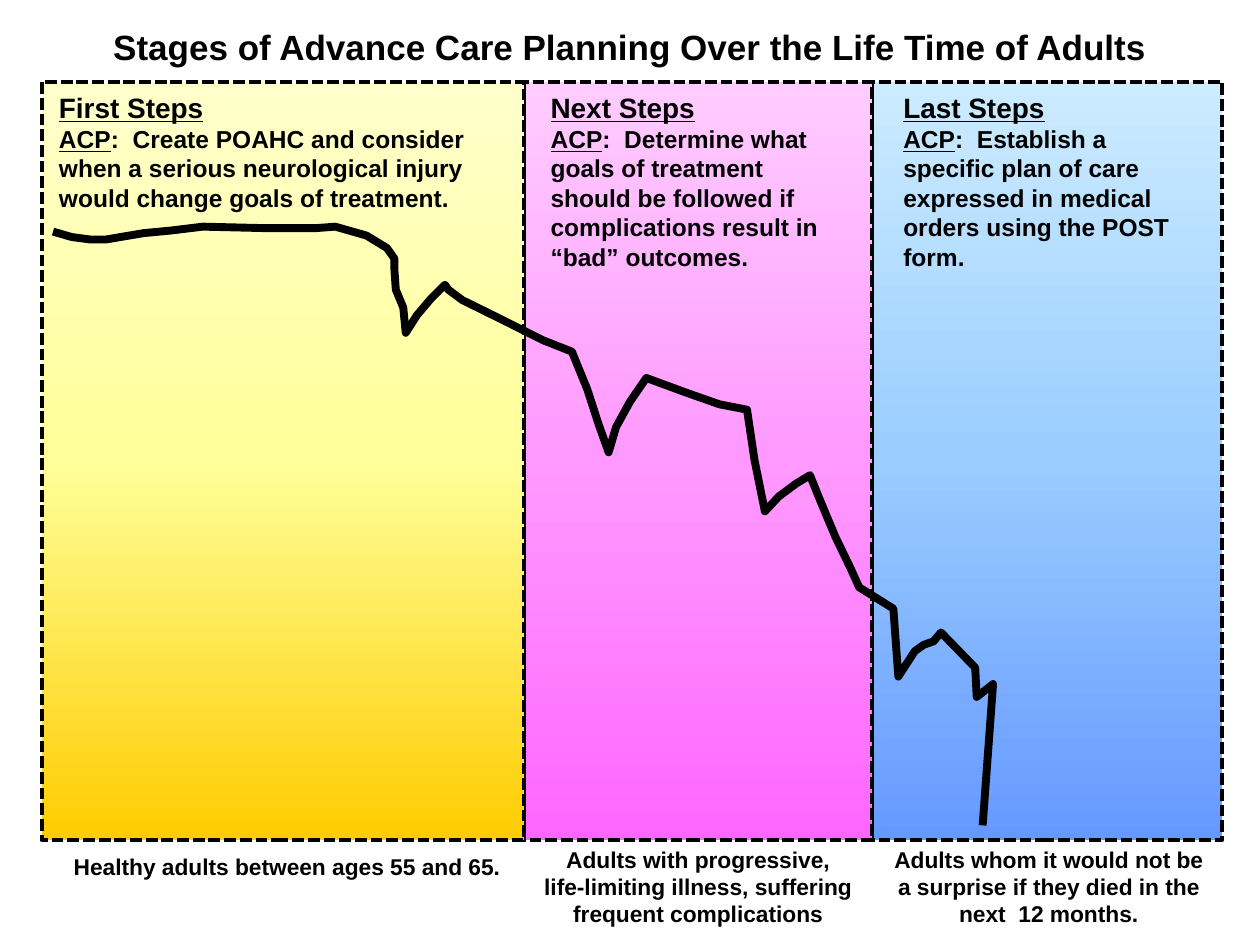
from copy import deepcopy
from dataclasses import dataclass

from pptx import Presentation
from pptx.dml.color import RGBColor as RGB
from pptx.enum.dml import MSO_LINE as Dash
from pptx.enum.shapes import MSO_SHAPE as Kind
from pptx.enum.text import PP_ALIGN as Align
from pptx.oxml.ns import qn
from pptx.util import Cm, Pt

INK = {"text": "000000", "line": "000000"}
FADES = {
    "first": ("FFFFCC", "FFFF99", "FFCC00"),
    "next": ("FFCCFF", "FF99FF", "FF66FF"),
    "last": ("CCECFF", "99CCFF", "6699FF"),
}
TOP, TALL = 1.65, 15.29
HEAD_TOP = 1.7


@dataclass
class Box:
    left: float
    top: float
    width: float
    height: float

    def cm(self) -> list:
        return [Cm(v) for v in (self.left, self.top, self.width, self.height)]


@dataclass
class Stage:
    name: str
    left: float
    width: float
    head: Box
    plan: str
    foot: Box
    group: str


STAGES = [
    Stage("last", 17.58, 7.06, Box(17.96, HEAD_TOP, 6.38, 3.94),
          "Establish a specific plan of care expressed in medical "
          "orders using the POST form.",
          Box(17.75, 16.92, 6.78, 1.93),
          "Adults whom it would not be a surprise if they died in the "
          "next  12 months."),
    Stage("next", 10.57, 7.01, Box(10.85, HEAD_TOP, 6.35, 3.33),
          "Determine what goals of treatment should be followed if "
          "complications result in “bad” outcomes.",
          Box(10.59, 16.92, 6.96, 1.93),
          "Adults with progressive,\vlife-limiting illness, suffering "
          "frequent complications"),
    Stage("first", 0.84, 9.73, Box(0.94, HEAD_TOP, 9.25, 2.74),
          "Create POAHC and consider when a serious neurological injury "
          "would change goals of treatment.",
          Box(0.99, 17.07, 9.58, 0.81),
          "Healthy adults between ages 55 and 65."),
]

CURVE = [
    (1.07, 4.67), (1.45, 4.78), (1.83, 4.83), (2.13, 4.83), (2.9, 4.7),
    (3.43, 4.65), (4.09, 4.57), (5.31, 4.6), (6.38, 4.6), (6.76, 4.57),
    (7.39, 4.75), (7.8, 5), (7.95, 5.21), (7.95, 5.41), (7.98, 5.84),
    (8.13, 6.2), (8.18, 6.71), (8.41, 6.35), (8.69, 6.02), (8.97, 5.74),
    (9.04, 5.84), (9.32, 6.05), (10.03, 6.4), (10.95, 6.86), (11.53, 7.09),
    (11.84, 7.85), (12.07, 8.56), (12.27, 9.12), (12.42, 8.61), (12.7, 8.1),
    (13.03, 7.62), (13.79, 7.9), (14.5, 8.15), (15.06, 8.26), (15.21, 9.27),
    (15.42, 10.31), (15.7, 10.01), (16.05, 9.75), (16.33, 9.58),
    (16.51, 10.03), (16.84, 10.82), (17.15, 11.46), (17.32, 11.84),
    (18.01, 12.27), (18.11, 13.64), (18.44, 13.13), (18.62, 13),
    (18.82, 12.93), (18.97, 12.75), (19.66, 13.46), (19.69, 14.05),
    (20.02, 13.79), (19.81, 16.64),
]


def style(run, size: float, under: bool = False) -> None:
    font = run.font
    font.name, font.size, font.bold = "Arial", Pt(size), True
    font.underline = under
    font.color.rgb = RGB.from_string(INK["text"])


def add_text(shapes, box: Box, text: str = ""):
    frame = shapes.add_textbox(*box.cm()).text_frame
    frame.word_wrap = True
    frame.text = text
    return frame


def add_label(shapes, box: Box, text: str, size: float) -> None:
    para = add_text(shapes, box, text).paragraphs[0]
    para.alignment = Align.CENTER
    for run in para.runs:
        style(run, size)


def add_head(shapes, stage: Stage) -> None:
    frame = add_text(shapes, stage.head, f"{stage.name.title()} Steps")
    style(frame.paragraphs[0].runs[0], 16, True)
    para = frame.add_paragraph()
    para.text = "ACP"
    style(para.runs[0], 14, True)
    run = para.add_run()
    run.text = f":  {stage.plan}"
    style(run, 14)


def fade(shape, hues: tuple) -> None:
    """Fill from top to bottom with three evenly spaced colours."""
    fill = shape.fill
    fill.gradient()
    fill.gradient_angle = 270
    stops = shape._element.spPr.find(f".//{qn('a:gsLst')}")
    stops.append(deepcopy(stops[-1]))
    for i, (stop, hue) in enumerate(zip(fill.gradient_stops, hues)):
        stop.position = i / 2
        stop.color.rgb = RGB.from_string(hue)


def ink_line(shape, width: float) -> None:
    shape.shadow.inherit = False
    shape.line.color.rgb = RGB.from_string(INK["line"])
    shape.line.width = Pt(width)


def add_stage(slide, stage: Stage) -> None:
    shapes = slide.shapes.add_group_shape().shapes
    box = Box(stage.left, TOP, stage.width, TALL)
    panel = shapes.add_shape(Kind.RECTANGLE, *box.cm())
    fade(panel, FADES[stage.name])
    ink_line(panel, 2.25)
    panel.line.dash_style = Dash.SQUARE_DOT
    add_head(shapes, stage)
    add_label(shapes, stage.foot, stage.group, 13)


def add_curve(slide) -> None:
    start, *rest = [(Cm(x), Cm(y)) for x, y in CURVE]
    path = slide.shapes.build_freeform(*start)
    path.add_line_segments(rest, close=False)
    curve = path.convert_to_shape()
    curve.fill.background()
    ink_line(curve, 4.5)
    curve.line._get_or_add_ln().append(
        curve._element.makeelement(qn("a:round"), {}))


def main() -> None:
    deck = Presentation()
    deck.slide_width, deck.slide_height = Cm(25.4), Cm(19.05)
    slide = deck.slides.add_slide(deck.slide_layouts[6])
    for stage in STAGES:
        add_stage(slide, stage)
    add_label(slide.shapes, Box(0, 0.38, 25.4, 1.12),
              "Stages of Advance Care Planning Over the Life Time of Adults",
              20)
    add_curve(slide)
    deck.save("out.pptx")


if __name__ == "__main__":
    main()
